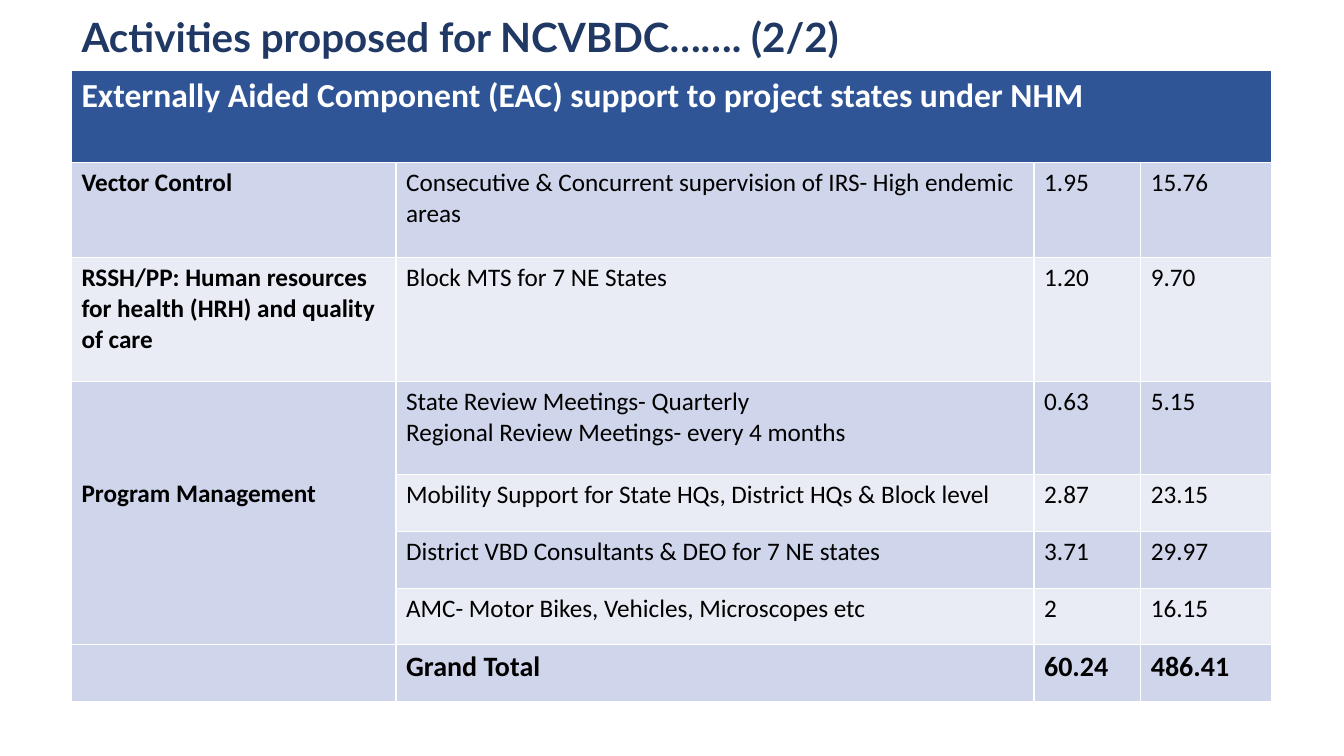
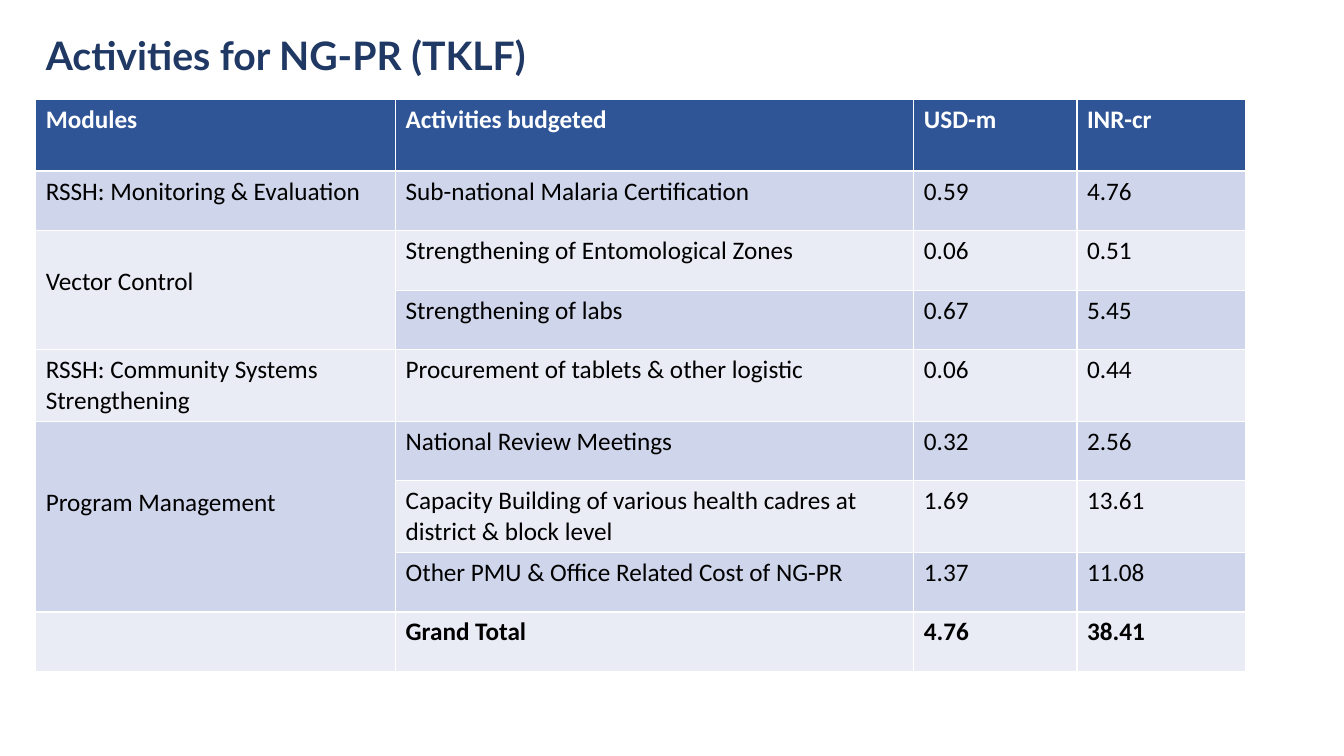
from dataclasses import dataclass

from pptx import Presentation
from pptx.dml.color import RGBColor
from pptx.enum.text import MSO_ANCHOR, MSO_AUTO_SIZE, PP_ALIGN
from pptx.util import Cm, Pt

NAVY = RGBColor(0x20, 0x38, 0x64)
HEADER_BLUE = RGBColor(0x2F, 0x55, 0x97)
BAND_DARK = RGBColor(0xCF, 0xD5, 0xEA)
BAND_LIGHT = RGBColor(0xE9, 0xEB, 0xF5)
WHITE = RGBColor(0xFF, 0xFF, 0xFF)
BLACK = RGBColor(0x00, 0x00, 0x00)

LEFT = PP_ALIGN.LEFT
MIDDLE = MSO_ANCHOR.MIDDLE
NO_AUTOFIT = MSO_AUTO_SIZE.NONE

TITLE_FONT = "Lato"
TABLE_FONT = "Calibri"
BODY_SIZE = 18
LINE_HEIGHT = 0.775
CELL_INSET = 0.13
TITLE_ONLY = 5


@dataclass(frozen=True)
class Box:
    left: float
    top: float
    width: float
    height: float


@dataclass(frozen=True)
class Merge:
    row: int
    col: int
    last_row: int
    last_col: int
    lines_down: int = 0


@dataclass(frozen=True)
class TableSlide:
    title: str
    title_size: float
    title_box: Box
    left: float
    top: float
    col_widths: tuple[float, ...]
    row_heights: tuple[float, ...]
    rows: tuple[tuple[str, ...], ...]
    merges: tuple[Merge, ...]
    header_size: float
    total_size: float
    bold_modules: bool


SLIDES = (
    TableSlide(
        title="Activities proposed for NCVBDC……. (2/2)",
        title_size=28.8,
        title_box=Box(1.8, 0.4, 30.12, 1.17),
        left=1.8,
        top=1.78,
        col_widths=(8.18, 16.08, 2.69, 3.3),
        row_heights=(2.32, 2.39, 3.12, 2.35, 1.43, 1.43, 1.43, 1.43),
        rows=(
            ("Externally Aided Component (EAC) support to project states under NHM", "", "", ""),
            ("Vector Control", "Consecutive & Concurrent supervision of IRS- High endemic areas", "1.95", "15.76"),
            ("RSSH/PP: Human resources for health (HRH) and quality of care", "Block MTS for 7 NE States", "1.20", "9.70"),
            ("Program Management", "State Review Meetings- Quarterly\nRegional Review Meetings- every 4 months", "0.63", "5.15"),
            ("", "Mobility Support for State HQs, District HQs & Block level", "2.87", "23.15"),
            ("", "District VBD Consultants & DEO for 7 NE states", "3.71", "29.97"),
            ("", "AMC- Motor Bikes, Vehicles, Microscopes etc", "2", "16.15"),
            ("", "Grand Total", "60.24", "486.41"),
        ),
        merges=(Merge(0, 0, 0, 3), Merge(3, 0, 6, 0, lines_down=3)),
        header_size=24,
        total_size=20,
        bold_modules=True,
    ),
    TableSlide(
        title="Activities for NG-PR (TKLF)",
        title_size=28,
        title_box=Box(0.9, 0.4, 30.66, 2.11),
        left=0.9,
        top=2.51,
        col_widths=(9.07, 13.06, 4.11, 4.24),
        row_heights=(1.8, 1.5, 1.5, 1.5, 1.8, 1.5, 1.8, 1.5, 1.5),
        rows=(
            ("Modules", "Activities budgeted", "USD-m", "INR-cr"),
            ("RSSH: Monitoring & Evaluation", "Sub-national Malaria Certification", "0.59", "4.76"),
            ("Vector Control", "Strengthening of Entomological Zones", "0.06", "0.51"),
            ("", "Strengthening of labs", "0.67", "5.45"),
            ("RSSH: Community Systems Strengthening", "Procurement of tablets & other logistic", "0.06", "0.44"),
            ("Program Management", "National Review Meetings", "0.32", "2.56"),
            ("", "Capacity Building of various health cadres at district & block level", "1.69", "13.61"),
            ("", "Other PMU & Office Related Cost of NG-PR", "1.37", "11.08"),
            ("", "Grand Total", "4.76", "38.41"),
        ),
        merges=(Merge(2, 0, 3, 0, lines_down=1), Merge(5, 0, 7, 0, lines_down=2)),
        header_size=BODY_SIZE,
        total_size=BODY_SIZE,
        bold_modules=False,
    ),
)


def style_runs(tf, font: str, size: float, color: RGBColor, bold: bool) -> None:
    for p in tf.paragraphs:
        for r in p.runs:
            r.font.name = font
            r.font.size = Pt(size)
            r.font.color.rgb = color
            r.font.bold = bold


def add_title(s, data: TableSlide) -> None:
    sp = s.shapes.title
    box = data.title_box
    sp.left, sp.top = Cm(box.left), Cm(box.top)
    sp.width, sp.height = Cm(box.width), Cm(box.height)
    tf = sp.text_frame
    tf.text = data.title
    tf.auto_size = NO_AUTOFIT
    tf.vertical_anchor = MIDDLE
    p = tf.paragraphs[0]
    p.alignment = LEFT
    p.line_spacing = 0.9
    style_runs(tf, TITLE_FONT, data.title_size, NAVY, True)


def fill_cell(cell, data: TableSlide, row: int, col: int) -> None:
    is_header = row == 0
    is_total = row == len(data.rows) - 1
    if is_header:
        fill, color, size = HEADER_BLUE, WHITE, data.header_size
    else:
        fill = BAND_DARK if row % 2 else BAND_LIGHT
        color = BLACK
        size = data.total_size if is_total else BODY_SIZE
    bold = is_header or is_total or (col == 0 and data.bold_modules)
    cell.fill.solid()
    cell.fill.fore_color.rgb = fill
    cell.text_frame.text = data.rows[row][col]
    style_runs(cell.text_frame, TABLE_FONT, size, color, bold)


def add_budget_table(s, data: TableSlide) -> None:
    table = s.shapes.add_table(
        len(data.rows), len(data.col_widths), Cm(data.left), Cm(data.top),
        Cm(sum(data.col_widths)), Cm(sum(data.row_heights)),
    ).table
    for column, width in zip(table.columns, data.col_widths):
        column.width = Cm(width)
    for table_row, height in zip(table.rows, data.row_heights):
        table_row.height = Cm(height)
    for row, texts in enumerate(data.rows):
        for col in range(len(texts)):
            fill_cell(table.cell(row, col), data, row, col)
    for merge in data.merges:
        cell = table.cell(merge.row, merge.col)
        cell.merge(table.cell(merge.last_row, merge.last_col))
        cell.margin_top = Cm(CELL_INSET + merge.lines_down * LINE_HEIGHT)


def main() -> None:
    prs = Presentation()
    prs.slide_width = Cm(33.87)
    prs.slide_height = Cm(19.05)
    for data in SLIDES:
        s = prs.slides.add_slide(prs.slide_layouts[TITLE_ONLY])
        add_title(s, data)
        add_budget_table(s, data)
    prs.save("out.pptx")


if __name__ == "__main__":
    main()
